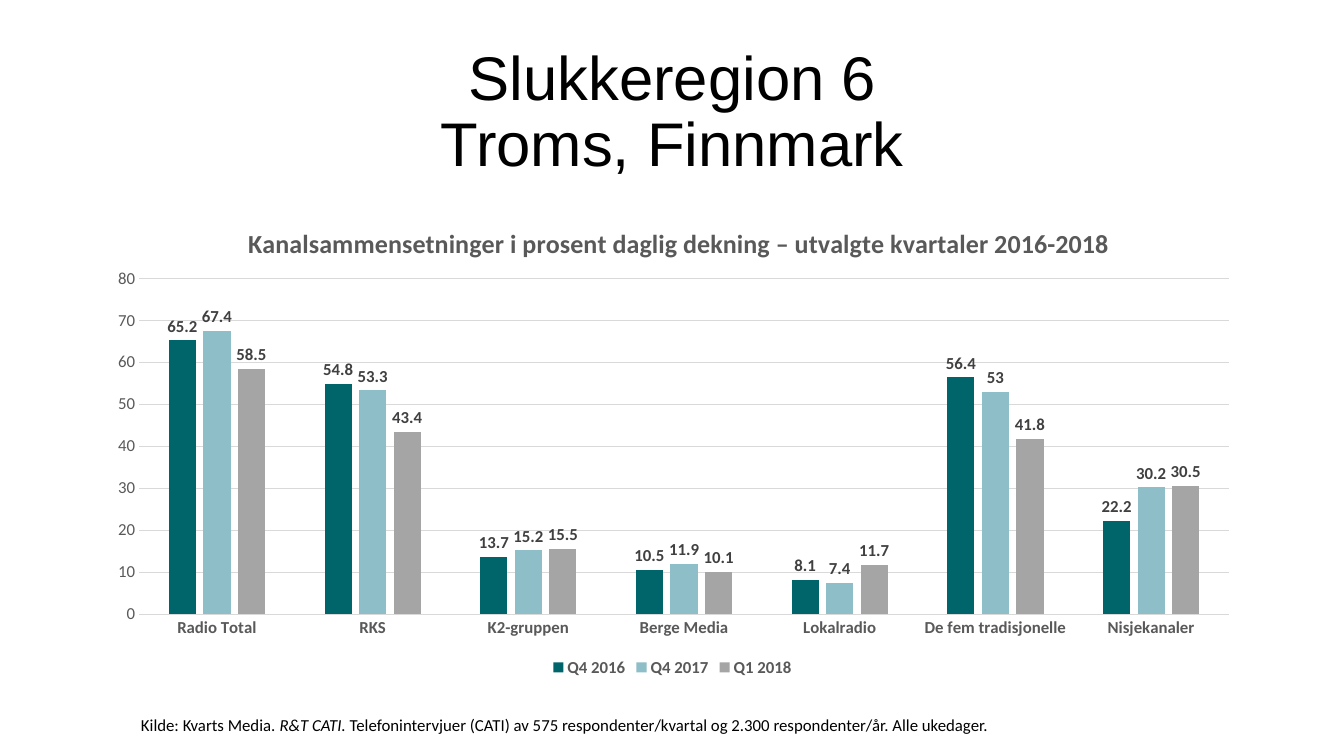
from lxml import etree
from pptx import Presentation
from pptx.chart.data import CategoryChartData
from pptx.dml.color import RGBColor
from pptx.enum.chart import XL_CHART_TYPE, XL_LABEL_POSITION, XL_LEGEND_POSITION, XL_TICK_MARK
from pptx.enum.text import MSO_ANCHOR, PP_ALIGN
from pptx.oxml.ns import qn
from pptx.util import Inches, Pt

CLUSTERED = XL_CHART_TYPE.COLUMN_CLUSTERED
OUTSIDE_END = XL_LABEL_POSITION.OUTSIDE_END
BOTTOM = XL_LEGEND_POSITION.BOTTOM
NO_TICK = XL_TICK_MARK.NONE
MIDDLE = MSO_ANCHOR.MIDDLE
CENTER = PP_ALIGN.CENTER

BLACK = RGBColor(0x00, 0x00, 0x00)
TEXT_GRAY = RGBColor(0x59, 0x59, 0x59)
LABEL_GRAY = RGBColor(0x40, 0x40, 0x40)
LINE_GRAY = RGBColor(0xD9, 0xD9, 0xD9)
TEAL = RGBColor(0x00, 0x64, 0x6B)
LIGHT_TEAL = RGBColor(0x8E, 0xBE, 0xC7)
GRAY = RGBColor(0xA5, 0xA5, 0xA5)

CHANNELS = ["Radio Total", "RKS", "K2-gruppen", "Berge Media", "Lokalradio",
            "De fem tradisjonelle", "Nisjekanaler"]
QUARTERS = [
    ("Q4 2016", TEAL, [65.2, 54.8, 13.7, 10.5, 8.1, 56.4, 22.2]),
    ("Q4 2017", LIGHT_TEAL, [67.4, 53.3, 15.2, 11.9, 7.4, 53, 30.2]),
    ("Q1 2018", GRAY, [58.5, 43.4, 15.5, 10.1, 11.7, 41.8, 30.5]),
]


def style_font(font, size, color, bold=False, name="Calibri"):
    font.name = name
    font.size = Pt(size)
    font.bold = bold
    font.color.rgb = color


def place(part, position, **settings):
    """Fix a chart part's place, in fractions of the chart's size.

    A missing layout element is added at the given child position.
    """
    layout = part.find(qn("c:layout"))
    if layout is None:
        layout = etree.Element(qn("c:layout"))
        part.insert(position, layout)
    manual = etree.SubElement(layout, qn("c:manualLayout"))
    for tag, value in settings.items():
        etree.SubElement(manual, qn(f"c:{tag}")).set("val", str(value))


presentation = Presentation()
presentation.slide_width = Inches(13.33)
presentation.slide_height = Inches(7.5)
slide = presentation.slides.add_slide(presentation.slide_layouts[5])

# Title
title = slide.shapes.title
title.left, title.top = Inches(0.92), Inches(0.4)
title.width, title.height = Inches(11.5), Inches(1.45)
title.text_frame.vertical_anchor = MIDDLE
paragraph = title.text_frame.paragraphs[0]
paragraph.alignment = CENTER
paragraph.line_spacing = 0.9
for index, line in enumerate(["Slukkeregion 6", "Troms, Finnmark"]):
    if index:
        paragraph.add_line_break()
    run = paragraph.add_run()
    run.text = line
    style_font(run.font, 44, BLACK, name="Arial")

# Chart
chart_data = CategoryChartData()
chart_data.categories = CHANNELS
for name, color, values in QUARTERS:
    chart_data.add_series(name, values)
chart = slide.shapes.add_chart(CLUSTERED, Inches(0.92), Inches(2), Inches(11.5),
                               Inches(4.76), chart_data).chart
style_font(chart.font, 10, BLACK)

chart.has_title = True
run = chart.chart_title.text_frame.paragraphs[0].add_run()
run.text = "Kanalsammensetninger i prosent daglig dekning – utvalgte kvartaler 2016-2018"
style_font(run.font, 18.6, TEXT_GRAY, bold=True)

chart.has_legend = True
chart.legend.position = BOTTOM
chart.legend.include_in_layout = False
style_font(chart.legend.font, 12, TEXT_GRAY, bold=True)

category_axis = chart.category_axis
style_font(category_axis.tick_labels.font, 12, TEXT_GRAY, bold=True)
category_axis.format.line.color.rgb = LINE_GRAY
category_axis.format.line.width = Pt(0.75)

value_axis = chart.value_axis
style_font(value_axis.tick_labels.font, 12, TEXT_GRAY)
value_axis.minimum_scale, value_axis.maximum_scale = 0, 80
value_axis.major_unit = 10
value_axis.format.line.fill.background()
value_axis.major_gridlines.format.line.color.rgb = LINE_GRAY
value_axis.major_gridlines.format.line.width = Pt(0.75)
for axis in (category_axis, value_axis):
    axis.major_tick_mark = NO_TICK
    axis.minor_tick_mark = NO_TICK

plot = chart.plots[0]
plot.gap_width = 219
plot.overlap = -27
plot.vary_by_categories = False
for series, (name, color, values) in zip(plot.series, QUARTERS):
    series.format.fill.solid()
    series.format.fill.fore_color.rgb = color
    labels = series.data_labels
    labels.show_value = True
    labels.position = OUTSIDE_END
    style_font(labels.font, 12, LABEL_GRAY, bold=True)

chart_element = chart.element.find(qn("c:chart"))
place(chart_element.find(qn("c:title")), 1, xMode="edge", yMode="edge", x=0.13, y=0.04)
place(chart_element.find(qn("c:plotArea")), 0, layoutTarget="inner", xMode="edge",
      yMode="edge", x=0.04, y=0.16, w=0.94, h=0.7)

# Source line
source = slide.shapes.add_textbox(Inches(1.3), Inches(7.04), Inches(11.23), Inches(0.3))
source.text_frame.word_wrap = True
paragraph = source.text_frame.paragraphs[0]
for text, italic in [
    ("Kilde: Kvarts Media. ", False),
    ("R&T CATI. ", True),
    ("Telefonintervjuer (CATI) av 575 respondenter/kvartal og "
     "2.300 respondenter/år. Alle ukedager.", False),
]:
    run = paragraph.add_run()
    run.text = text
    style_font(run.font, 12, BLACK)
    run.font.italic = italic

presentation.save("out.pptx")
